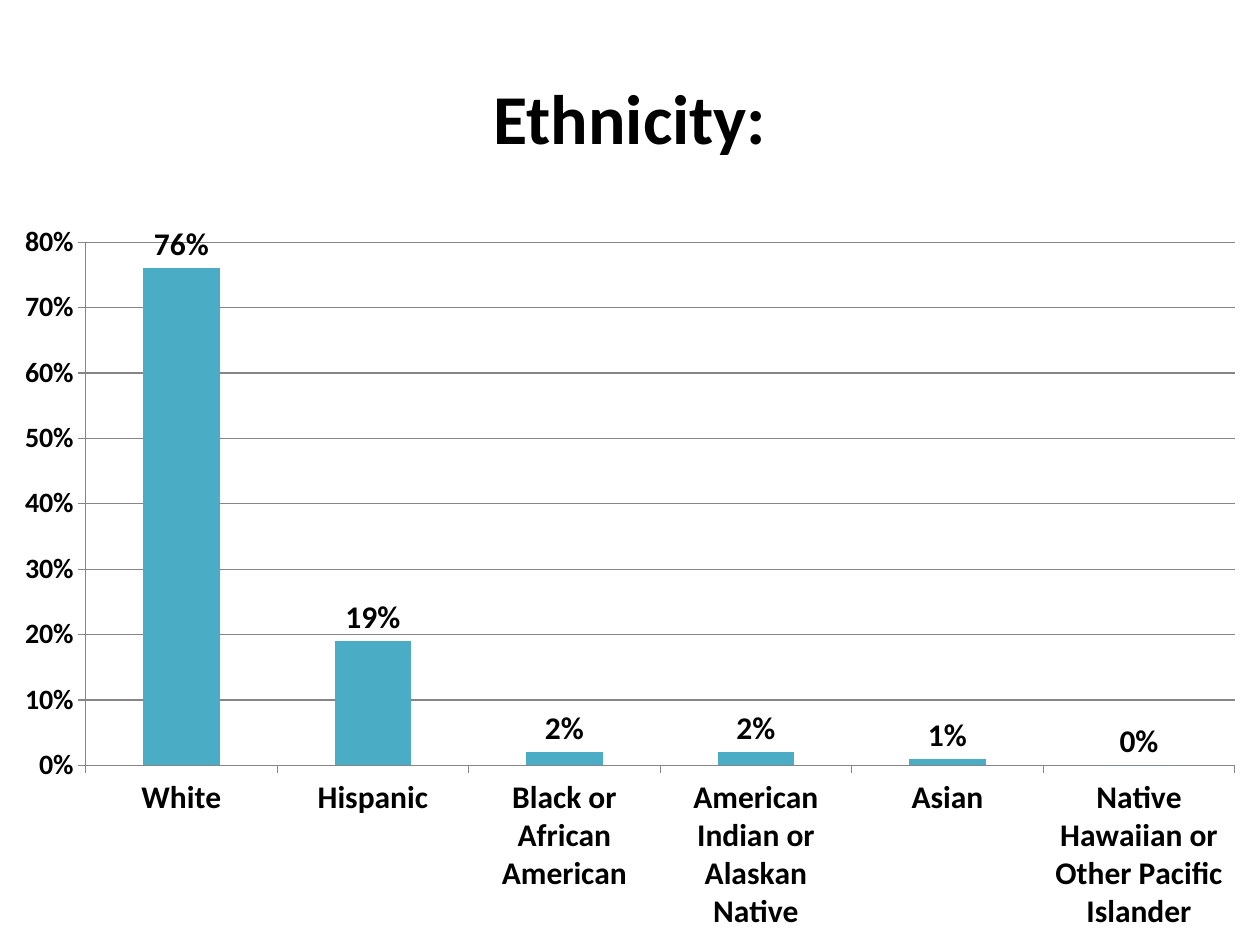
import pptx
import pptx.chart.data
import pptx.dml.color
import pptx.enum.chart
import pptx.enum.text
import pptx.util

Inches, Pt = pptx.util.Inches, pptx.util.Pt
RGB = pptx.dml.color.RGBColor
ENUM = pptx.enum.chart

# Content
TITLE = "Ethnicity:"
SHARES = {
    "White": 0.76,
    "Hispanic": 0.19,
    "Black or African American": 0.02,
    "American Indian or Alaskan Native": 0.02,
    "Asian": 0.01,
    "Native Hawaiian or Other Pacific Islander": 0,
}

# Format
BLACK = RGB(0x00, 0x00, 0x00)
GRAY = RGB(0x86, 0x86, 0x86)
TEAL = RGB(0x4B, 0xAC, 0xC6)
WIDE, HIGH = 10, 7.5
TOP = 1.67


def apply(thing, **values):
    for name, value in values.items():
        setattr(thing, name, value)


def style(font, size):
    apply(font, name="Calibri", size=Pt(size), bold=True)
    font.color.rgb = BLACK


def rule(line):
    line.color.rgb = GRAY
    line.width = Pt(0.75)


def add_title(slide):
    title = slide.shapes.title
    apply(title, left=Inches(0), top=Inches(0.3),
          width=Inches(WIDE), height=Inches(1.25))
    frame = title.text_frame
    apply(frame, text=TITLE, word_wrap=True,
          vertical_anchor=pptx.enum.text.MSO_ANCHOR.MIDDLE)
    para = frame.paragraphs[0]
    para.alignment = pptx.enum.text.PP_ALIGN.CENTER
    style(para.runs[0].font, 40)


def add_bars(slide):
    data = pptx.chart.data.CategoryChartData(number_format="0%")
    data.categories = list(SHARES)
    data.add_series("Series 1", list(SHARES.values()))
    chart = slide.shapes.add_chart(
        ENUM.XL_CHART_TYPE.COLUMN_CLUSTERED, Inches(0), Inches(TOP),
        Inches(WIDE), Inches(HIGH - TOP), data).chart
    apply(chart, has_legend=False, has_title=False)
    style(chart.font, 18)

    # Bars and their labels
    plot = chart.plots[0]
    apply(plot, gap_width=150, vary_by_categories=False, has_data_labels=True)
    fill = plot.series[0].format.fill
    fill.solid()
    fill.fore_color.rgb = TEAL
    labels = plot.data_labels
    apply(labels, show_value=True, number_format="0%",
          number_format_is_linked=False,
          position=ENUM.XL_LABEL_POSITION.OUTSIDE_END)
    style(labels.font, 18)

    # Axes
    for axis, size in ((chart.category_axis, 18), (chart.value_axis, 16)):
        apply(axis, major_tick_mark=ENUM.XL_TICK_MARK.OUTSIDE,
              minor_tick_mark=ENUM.XL_TICK_MARK.NONE)
        style(axis.tick_labels.font, size)
        rule(axis.format.line)
    scale = chart.value_axis
    apply(scale, minimum_scale=0, maximum_scale=0.8, major_unit=0.1,
          has_major_gridlines=True)
    apply(scale.tick_labels, number_format="0%", number_format_is_linked=False)
    rule(scale.major_gridlines.format.line)


def main():
    deck = pptx.Presentation()
    apply(deck, slide_width=Inches(WIDE), slide_height=Inches(HIGH))
    slide = deck.slides.add_slide(deck.slide_layouts[5])
    add_title(slide)
    add_bars(slide)
    deck.save("out.pptx")


if __name__ == "__main__":
    main()
